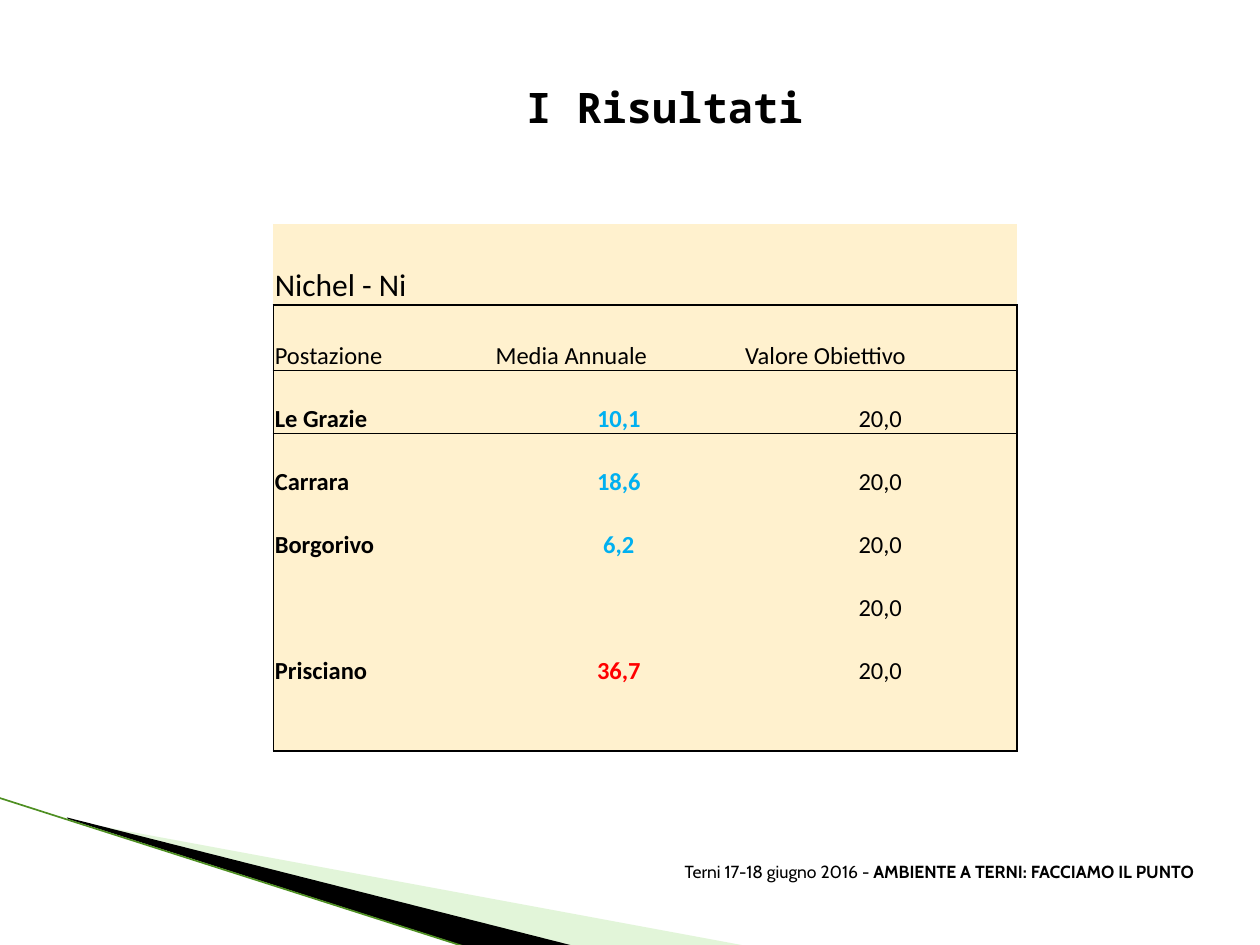
"""Builds the slide with the annual nickel results at the Terni stations."""
from lxml.etree import SubElement
from pptx import Presentation
from pptx.dml.color import RGBColor
from pptx.enum.shapes import MSO_CONNECTOR
from pptx.enum.text import MSO_ANCHOR, PP_ALIGN
from pptx.oxml.ns import qn
from pptx.util import Cm, Pt


def rgb(value):
    return RGBColor.from_string(value)


def write(p, text, size=14, font="Calibri", color="000000", bold=False, align=PP_ALIGN.LEFT):
    p.alignment = align
    r = p.add_run()
    r.text = text
    r.font.size = Pt(size)
    r.font.name = font
    r.font.bold = bold
    r.font.color.rgb = rgb(color)


prs = Presentation()
prs.slide_width, prs.slide_height = Cm(25.4), Cm(19.05)
s = prs.slides.add_slide(prs.slide_layouts[5])

wedges = [
    ("B8E7A1", 40, [(1.4, 16.54), (15.11, 19.08), (11.58, 19.08), (1.4, 16.51)]),
    ("000000", 100, [(1.35, 16.48), (11.61, 19.08), (9.45, 19.1), (1.37, 16.51)]),
]
for color, opacity, points in wedges:
    corners = [(Cm(x), Cm(y)) for x, y in points]
    builder = s.shapes.build_freeform(*corners[0])
    builder.add_line_segments(corners[1:])
    sp = builder.convert_to_shape()
    sp.shadow.inherit = False
    sp.line.fill.background()
    sp.fill.solid()
    sp.fill.fore_color.rgb = rgb(color)
    clr = sp.fill._xPr.find(qn("a:solidFill"))[0]
    SubElement(clr, qn("a:alpha"), val=str(opacity * 1000))

edge = s.shapes.add_connector(MSO_CONNECTOR.STRAIGHT, Cm(-0.03), Cm(16.08), Cm(9.42), Cm(19.1))
edge.line.color.rgb = rgb("4E8F22")
edge.line.width = Pt(0.95)
SubElement(edge._element.spPr, qn("a:effectLst"))

footer = s.shapes.add_textbox(Cm(10.31), Cm(17.37), Cm(14), Cm(0.53))
tf = footer.text_frame
tf.word_wrap = True
tf.vertical_anchor = MSO_ANCHOR.BOTTOM
p = tf.paragraphs[0]
write(p, "Terni 17-18 giugno 2016 - ", size=10, font="Cabin", align=PP_ALIGN.RIGHT)
write(p, "AMBIENTE A TERNI: FACCIAMO IL PUNTO", size=10, font="Cabin", bold=True, align=PP_ALIGN.RIGHT)

title = s.shapes.title
title.left, title.top, title.width, title.height = Cm(4.5), Cm(1.52), Cm(17.8), Cm(1.28)
tf = title.text_frame
tf.vertical_anchor = MSO_ANCHOR.MIDDLE
write(tf.paragraphs[0], "I Risultati", size=24, font="Noto Sans Mono", bold=True, align=PP_ALIGN.CENTER)

rows = [
    ("Nichel - Ni", "", ""),
    ("Postazione", "Media Annuale", "Valore Obiettivo"),
    ("Le Grazie", "10,1", "20,0"),
    ("Carrara", "18,6", "20,0"),
    ("Borgorivo", "6,2", "20,0"),
    ("", "", "20,0"),
    ("Prisciano", "36,7", "20,0"),
    ("", "", ""),
]
widths = [4.45, 5.03, 5.51]
heights = [1.63, 1.32] + [1.27] * 5 + [1.32]
frame = s.shapes.add_table(len(rows), len(widths), Cm(5.51), Cm(4.52), Cm(sum(widths)), Cm(sum(heights)))
tbl = frame.table
tbl.first_row = tbl.horz_banding = False
tbl._tbl.tblPr.find(qn("a:tableStyleId")).text = "{2D5ABB26-0587-4C30-8999-92F81FD0307C}"
for col, width in zip(tbl.columns, widths):
    col.width = Cm(width)
for row, height in zip(tbl.rows, heights):
    row.height = Cm(height)

for i, texts in enumerate(rows):
    for j, text in enumerate(texts):
        cell = tbl.cell(i, j)
        cell.margin_left = cell.margin_right = cell.margin_top = Cm(0.03)
        cell.margin_bottom = 0
        cell.vertical_anchor = MSO_ANCHOR.BOTTOM
        borders = {
            "a:lnL": i > 0 and j == 0,
            "a:lnR": i > 0 and j == 2,
            "a:lnT": i in (1, 2),
            "a:lnB": i in (0, 1, 7),
        }
        for tag, shown in borders.items():
            if shown:
                ln = SubElement(cell._tc.get_or_add_tcPr(), qn(tag), w=str(Pt(1)))
                SubElement(SubElement(ln, qn("a:solidFill")), qn("a:srgbClr"), val="000000")
        cell.fill.solid()
        cell.fill.fore_color.rgb = rgb("FFF1CE")
        if text:
            is_data = i > 1
            color = "000000"
            if is_data and j == 1:
                color = "FF0000" if text == "36,7" else "00B0F0"
            write(cell.text_frame.paragraphs[0], text, size=18 if i == 0 else 14, color=color,
                  bold=is_data and j < 2, align=PP_ALIGN.CENTER if is_data and j else PP_ALIGN.LEFT)

prs.save("out.pptx")
